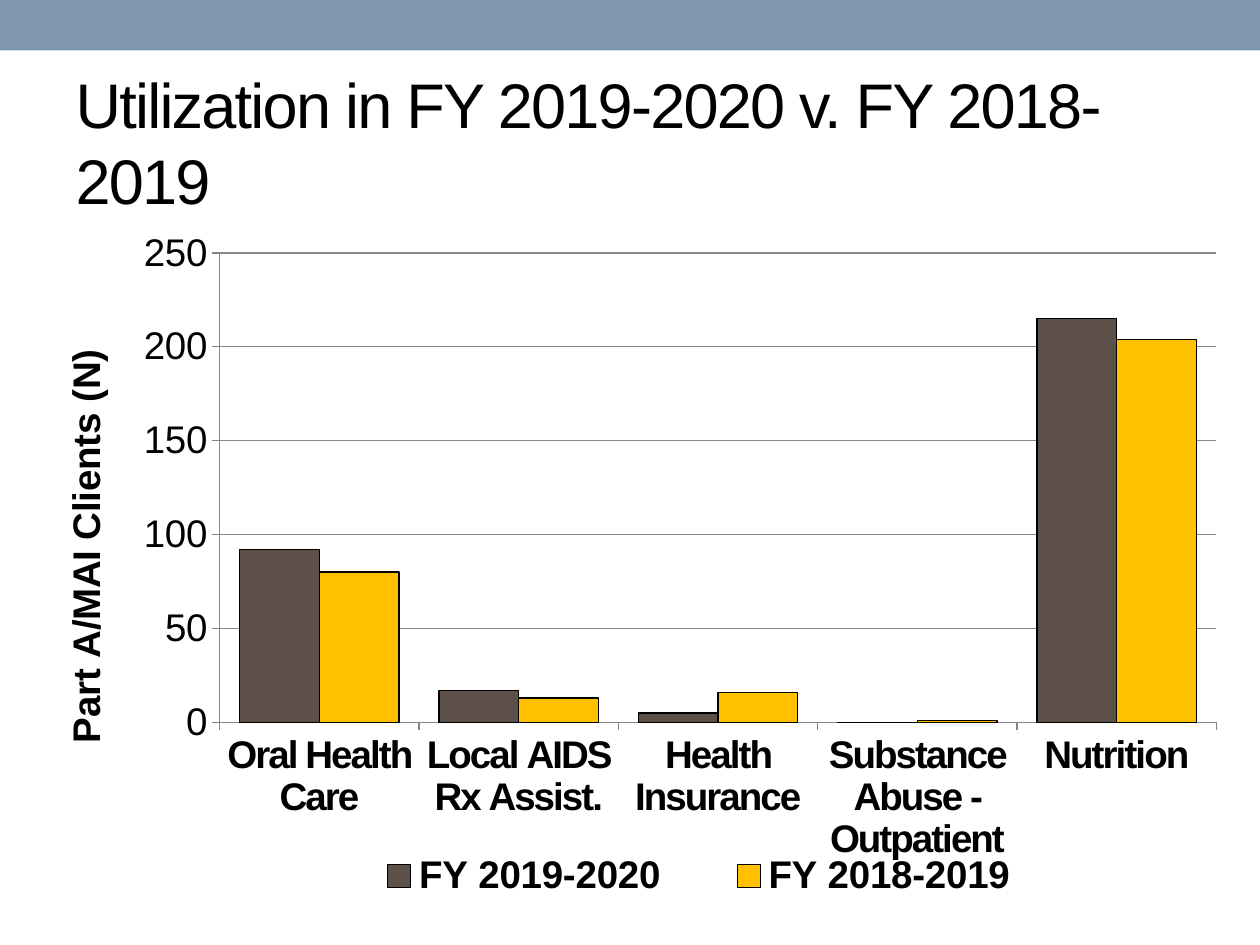
from lxml.etree import SubElement
from pptx import Presentation
from pptx.chart.data import CategoryChartData
from pptx.dml.color import RGBColor
from pptx.enum.chart import XL_CHART_TYPE, XL_LEGEND_POSITION, XL_TICK_MARK
from pptx.enum.shapes import MSO_SHAPE
from pptx.enum.text import MSO_ANCHOR, PP_ALIGN
from pptx.oxml.ns import qn
from pptx.util import Pt

BLACK = RGBColor(0, 0, 0)
GRAY = RGBColor(0x87, 0x87, 0x87)
BAND = RGBColor(0x7E, 0x97, 0xAD)
BROWN = RGBColor(0x5C, 0x50, 0x48)
GOLD = RGBColor(0xFF, 0xC0, 0x00)
FONT = "Arial"

TITLE = "Utilization in FY 2019-2020 v. FY 2018-2019"
AXIS_TITLE = "Part A/MAI Clients (N)"
CATEGORIES = ["Oral Health Care", "Local AIDS Rx Assist.", "Health Insurance",
              "Substance Abuse - Outpatient", "Nutrition"]
SERIES = [("FY 2019-2020", (92, 17, 5, 0, 215), BROWN),
          ("FY 2018-2019", (80, 13, 16, 1, 204), GOLD)]
PLOT_AREA = (0.164, 0.033, 0.824, 0.69)
LEGEND_AREA = (0.25, 0.92, 0.62, 0.07)


def set_font(font, size, bold=False):
    font.name, font.size, font.bold = FONT, Pt(size), bold
    font.color.rgb = BLACK


def set_layout(element, area, inner=False):
    """Place a chart part by fractions of the chart: left, top, width, height."""
    layout = element.find(qn("c:layout"))
    if layout is None:
        layout = SubElement(element, qn("c:layout"))
        anchor = element.find(qn("c:legendPos"))
        if anchor is not None:
            anchor.addnext(layout)
        else:
            element.insert(0, layout)
    manual = SubElement(layout, qn("c:manualLayout"))
    settings = [("layoutTarget", "inner")] if inner else []
    settings += [("xMode", "edge"), ("yMode", "edge")]
    settings += zip("xywh", area)
    for tag, value in settings:
        SubElement(manual, qn(f"c:{tag}")).set("val", str(value))


def add_title(slide):
    title = slide.shapes.title
    title.left, title.top, title.width, title.height = Pt(36), Pt(41.76), Pt(648), Pt(77.76)
    tf = title.text_frame
    tf.text = TITLE
    tf.word_wrap = True
    tf.vertical_anchor = MSO_ANCHOR.MIDDLE
    p = tf.paragraphs[0]
    p.alignment = PP_ALIGN.LEFT
    set_font(p.font, 36)
    p.runs[0].font._element.set("spc", "-100")


def add_utilization_chart(slide):
    data = CategoryChartData(number_format="#,##0")
    data.categories = CATEGORIES
    for name, values, _ in SERIES:
        data.add_series(name, values)
    chart = slide.shapes.add_chart(XL_CHART_TYPE.COLUMN_CLUSTERED, Pt(12.24), Pt(131.76),
                                   Pt(691.2), Pt(388.8), data).chart
    chart.has_title = False
    set_font(chart.font, 22)

    plot = chart.plots[0]
    plot.gap_width, plot.overlap, plot.vary_by_categories = 50, 0, False
    for series, (_, _, color) in zip(plot.series, SERIES):
        series.format.fill.solid()
        series.format.fill.fore_color.rgb = color
        series.format.line.color.rgb = BLACK
        series.format.line.width = Pt(0.75)

    cat_axis, val_axis = chart.category_axis, chart.value_axis
    for axis, bold in ((cat_axis, True), (val_axis, False)):
        axis.major_tick_mark = XL_TICK_MARK.OUTSIDE
        axis.format.line.color.rgb = GRAY
        set_font(axis.tick_labels.font, 22, bold)
    cat_axis.tick_labels.font._element.set("spc", "-100")

    val_axis.minimum_scale, val_axis.maximum_scale, val_axis.major_unit = 0, 250, 50
    val_axis.tick_labels.number_format = "#,##0"
    val_axis.tick_labels.number_format_is_linked = False
    val_axis.has_major_gridlines = True
    val_axis.major_gridlines.format.line.color.rgb = GRAY
    tf = val_axis.axis_title.text_frame
    tf.text = AXIS_TITLE
    set_font(tf.paragraphs[0].font, 22, True)

    chart.has_legend = True
    legend = chart.legend
    legend.position = XL_LEGEND_POSITION.BOTTOM
    legend.include_in_layout = False
    set_font(legend.font, 22, True)
    set_layout(legend._element, LEGEND_AREA)
    set_layout(chart._chartSpace.chart.plotArea, PLOT_AREA, inner=True)


def main():
    prs = Presentation()
    prs.slide_width, prs.slide_height = Pt(720), Pt(540)
    slide = prs.slides.add_slide(prs.slide_layouts[5])
    band = slide.shapes.add_shape(MSO_SHAPE.RECTANGLE, 0, 0, prs.slide_width, Pt(28.8))
    band.shadow.inherit = False
    band.fill.solid()
    band.fill.fore_color.rgb = BAND
    band.line.fill.background()
    add_title(slide)
    add_utilization_chart(slide)
    prs.save("out.pptx")


if __name__ == "__main__":
    main()
